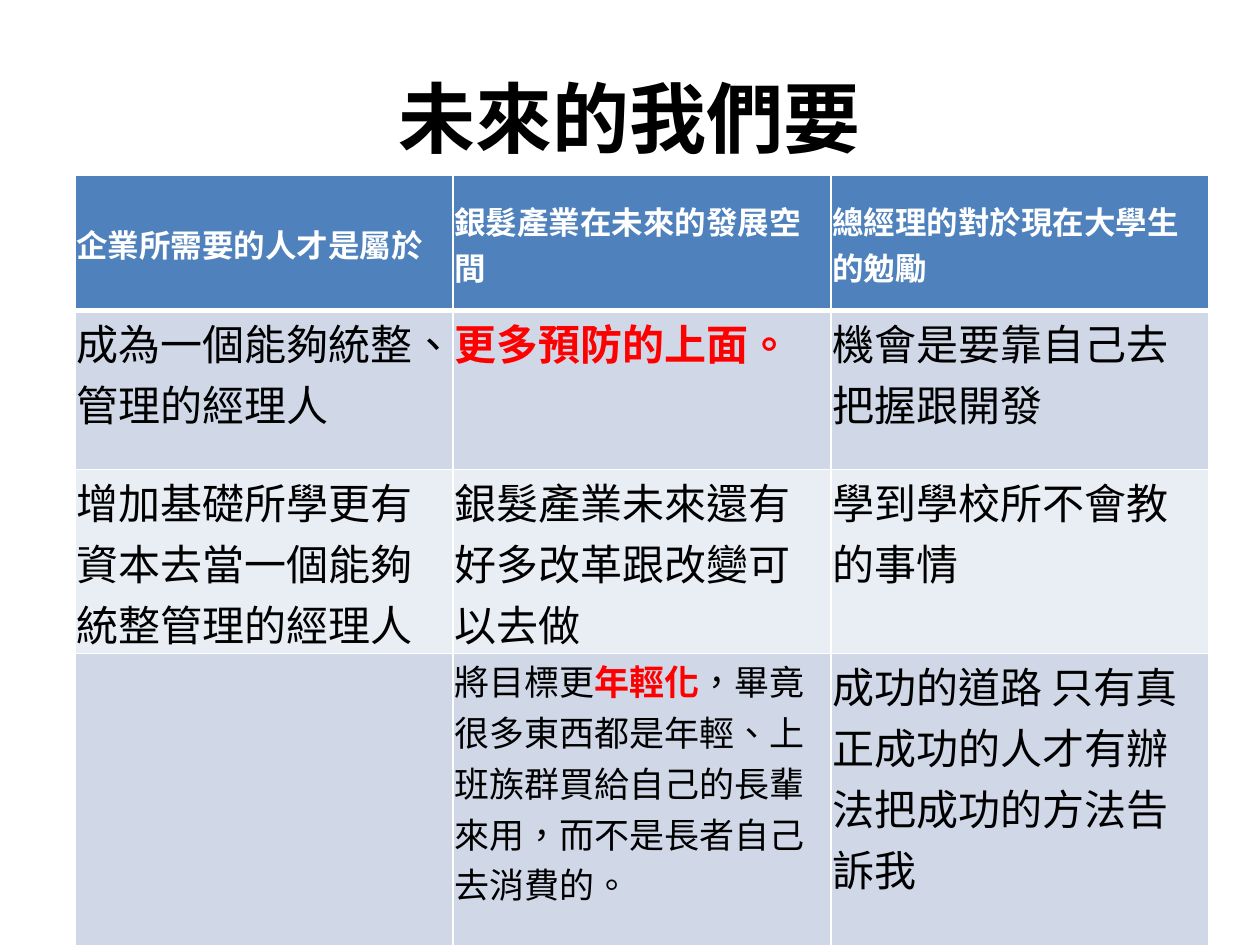
"""Builds a slide with a title and a three-column table of lessons."""
from lxml.etree import SubElement as Sub, Element as Elem
from pptx import Presentation as Deck
from pptx.dml.color import RGBColor as Color
from pptx.enum.text import MSO_ANCHOR as Anchor, PP_ALIGN as Align
from pptx.oxml.ns import qn
from pptx.util import Cm, Pt

WHITE = Color(255, 255, 255)
BLACK = Color(0, 0, 0)
RED = Color(255, 0, 0)
BLUE = Color(0x4F, 0x81, 0xBD)
DARK = Color(0xD0, 0xD8, 0xE8)
LIGHT = Color(0xE9, 0xED, 0xF4)
SANS = "Noto Sans CJK SC"
LATIN = "Calibri"

HEAD = ["企業所需要的人才是屬於", "銀髮產業在未來的發展空間", "總經理的對於現在大學生的勉勵"]
BODY = [
    ["成為一個能夠統整、管理的經理人", [("更多預防的上面。", RED, SANS)],
     "機會是要靠自己去把握跟開發"],
    ["增加基礎所學更有資本去當一個能夠統整管理的經理人",
     "銀髮產業未來還有好多改革跟改變可以去做", "學到學校所不會教的事情"],
    ["", [("將目標更", BLACK, SANS), ("年輕化", RED, SANS),
          ("，畢竟很多東西都是年輕、上班族群買給自己的長輩來用，而不是長者自己去消費的", BLACK, SANS),
          ("。", BLACK, LATIN)],
     "成功的道路 只有真正成功的人才有辦法把成功的方法告訴我"],
]
HIGH = [2.72, 3.2, 3.71, 5.89]


class Page:
    """Holds the style and the current slide."""

    def __init__(self, deck):
        self.slide = deck.slides.add_slide(deck.slide_layouts[5])

    def style(self, run, size, color, bold, face=SANS):
        font = run.font
        font.size, font.bold, font.name = Pt(size), bold, face
        font.color.rgb = color
        props = run._r.get_or_add_rPr()
        props.set("lang", "zh-TW")
        Sub(props, qn("a:ea")).set("typeface", face)

    def title(self, text, left, top, width, height):
        shape = self.slide.shapes.title
        shape.left, shape.top = Cm(left), Cm(top)
        shape.width, shape.height = Cm(width), Cm(height)
        frame = shape.text_frame
        frame.text = text
        frame.vertical_anchor = Anchor.MIDDLE
        para = frame.paragraphs[0]
        para.alignment = Align.CENTER
        self.style(para.runs[0], 44, BLACK, True)

    def border(self, cell, row):
        props = cell._tc.get_or_add_tcPr()
        for pos, side in enumerate("LRTB"):
            thick = (row, side) in ((0, "B"), (1, "T"))
            line = Elem(qn(f"a:ln{side}"), w=str(Pt(3 if thick else 1)))
            fill = Sub(line, qn("a:solidFill"))
            Sub(fill, qn("a:srgbClr")).set("val", str(WHITE))
            props.insert(pos, line)

    def cell(self, cell, row, text, size, color, bold, fill):
        cell.margin_left = cell.margin_right = cell.margin_top = Cm(0.03)
        cell.margin_bottom = 0
        cell.fill.solid()
        cell.fill.fore_color.rgb = fill
        self.border(cell, row)
        para = cell.text_frame.paragraphs[0]
        parts = [(text, color, SANS)] if isinstance(text, str) else text
        for words, tint, face in parts:
            if words:
                run = para.add_run()
                run.text = words
                self.style(run, size, tint, bold or tint == RED, face)

    def table(self, left, top, width):
        rows = [HEAD] + BODY
        frame = self.slide.shapes.add_table(
            len(rows), len(HEAD), Cm(left), Cm(top), Cm(width), Cm(sum(HIGH)))
        grid = frame.table
        for col in grid.columns:
            col.width = Cm(width / len(HEAD))
        for num, texts in enumerate(rows):
            grid.rows[num].height = Cm(HIGH[num])
            for col, text in enumerate(texts):
                cell = grid.cell(num, col)
                if num == 0:
                    cell.vertical_anchor = Anchor.MIDDLE
                    self.cell(cell, num, text, 18, WHITE, True, BLUE)
                else:
                    size = 20 if len(text) == 4 else 24
                    fill = DARK if num % 2 else LIGHT
                    self.cell(cell, num, text, size, BLACK, False, fill)


def main():
    deck = Deck()
    deck.slide_width, deck.slide_height = Cm(25.4), Cm(19.05)
    page = Page(deck)
    page.title("未來的我們要", 1.27, 0.76, 22.86, 3.18)
    page.table(1.51, 3.54, 22.86)
    deck.save("out.pptx")


if __name__ == "__main__":
    main()
